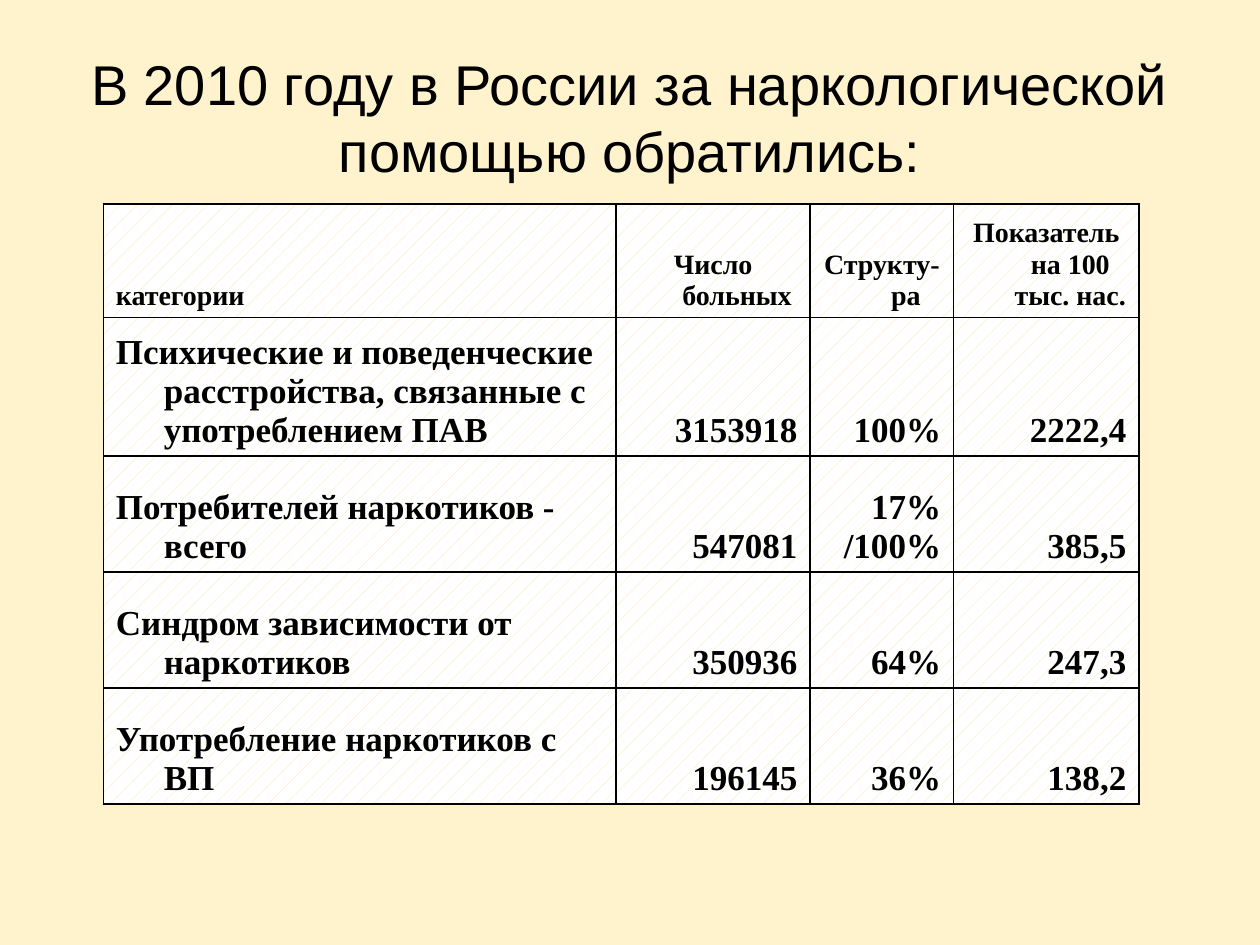
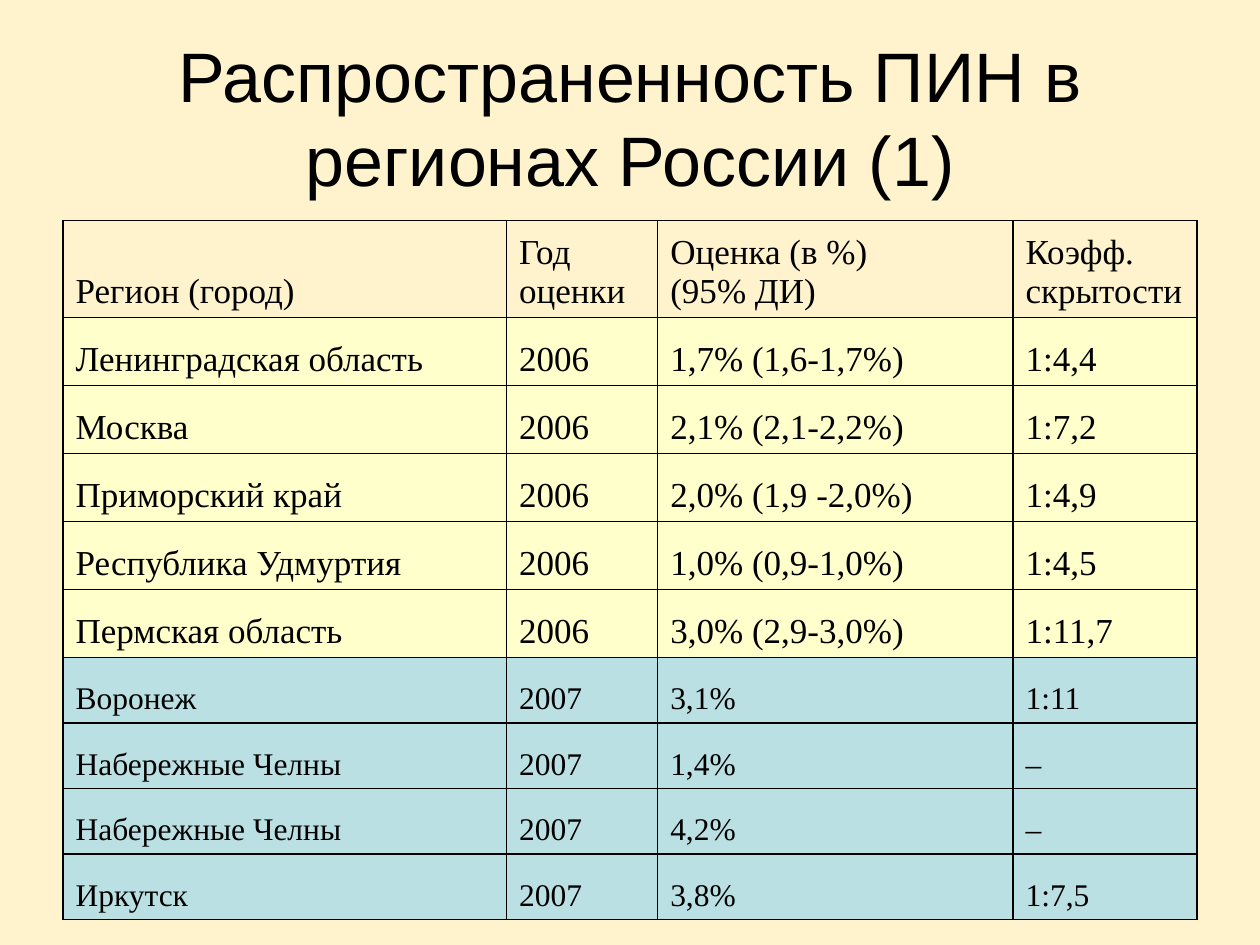
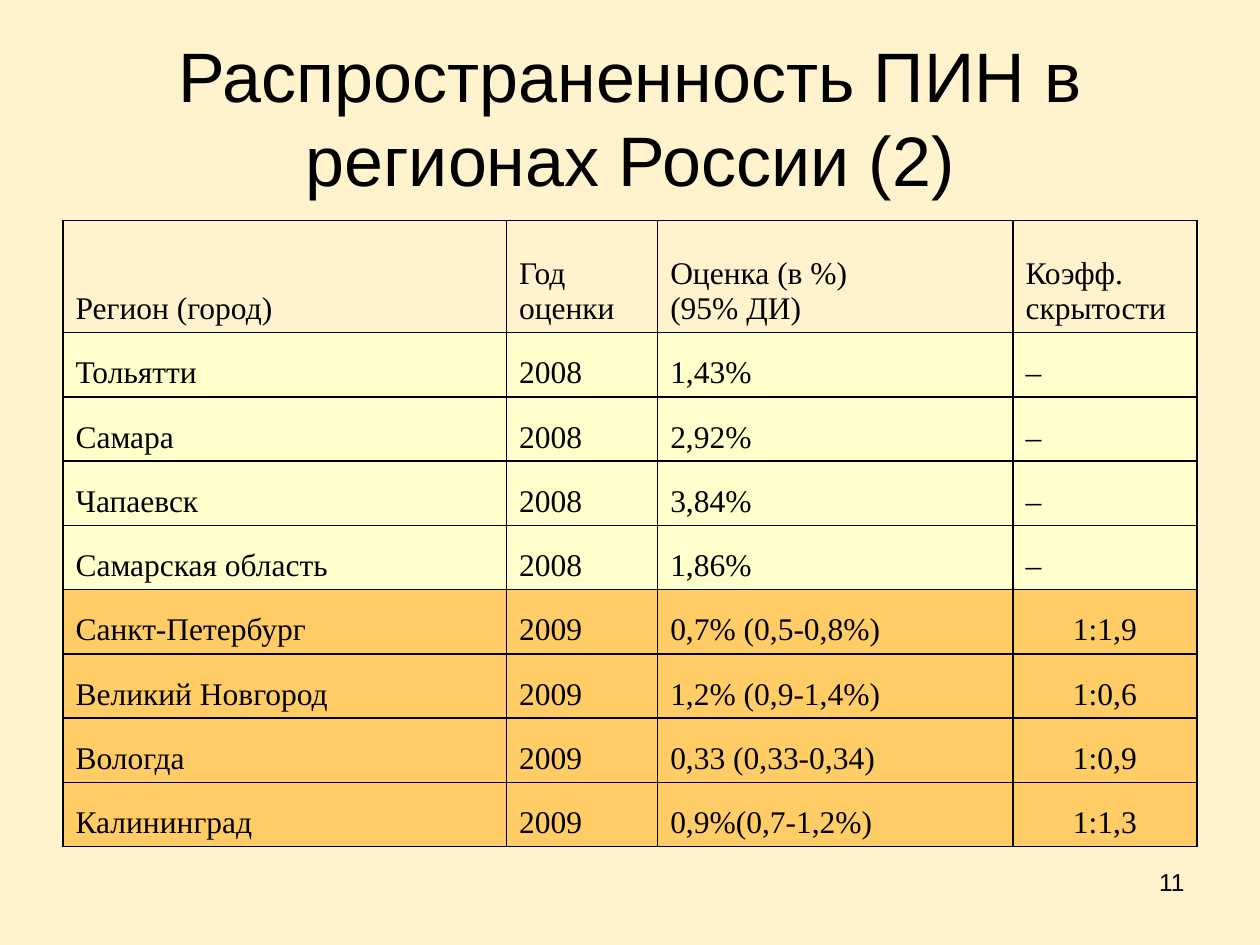
from dataclasses import dataclass

from lxml.etree import SubElement as Sub
from pptx import Presentation
from pptx.dml.color import RGBColor
from pptx.enum.dml import MSO_PATTERN as Pat
from pptx.enum.text import MSO_ANCHOR as Anchor, PP_ALIGN as Align
from pptx.oxml.ns import qn
from pptx.util import Inches, Pt

PAPER, INK, WHITE, HATCH = "FFF3CD", "000000", "FFFFFF", "FBE2A3"
CREAM, AQUA, AMBER = "FFFFCC", "BBE0E3", "FFCC66"
SANS, SERIF = "Arial", "Times New Roman"
SIDES = {"l": Align.LEFT, "c": Align.CENTER, "r": Align.RIGHT}
WIDE = [3.52, 1.2, 2.82, 1.46]
HEAD = ("Регион (город)", "Год оценки", "Оценка (в %)\n(95% ДИ)", "Коэфф. скрытости")


@dataclass
class Band:
    """Rows of one height, type size and fill; sides has a letter per column."""
    rows: list[tuple[str, ...]]
    high: float
    size: int
    fill: str = ""
    sides: str = "llll"


@dataclass
class Grid:
    left: float
    top: float
    cols: list[float]
    bands: list[Band]
    bold: bool = False
    hang: float = 0


@dataclass
class Page:
    title: str
    size: int
    grid: Grid
    num: str = ""


PAGES = [
    Page("В 2010 году в России за наркологической помощью обратились:", 32,
         Grid(0.82, 1.62, [4.07, 1.54, 1.14, 1.47], [
             Band([("категории", "Число больных", "Структу-ра",
                    "Показатель на 100 тыс. нас.")], 0.84, 16, HATCH, "lccc"),
             Band([("Психические и поведенческие расстройства, связанные с "
                    "употреблением ПАВ", "3153918", "100%", "2222,4")],
                  1.08, 20, HATCH, "lrrr"),
             Band([("Потребителей наркотиков - всего", "547081", "17%\n/100%", "385,5"),
                   ("Синдром зависимости от наркотиков", "350936", "64%", "247,3"),
                   ("Употребление наркотиков с ВП", "196145", "36%", "138,2")],
                  0.92, 20, HATCH, "lrrr"),
         ], bold=True, hang=0.38)),
    Page("Распространенность ПИН в регионах России (1)", 40,
         Grid(0.5, 1.75, WIDE, [
             Band([HEAD], 0.77, 20),
             Band([("Ленинградская область", "2006", "1,7% (1,6-1,7%)", "1:4,4"),
                   ("Москва", "2006", "2,1% (2,1-2,2%)", "1:7,2"),
                   ("Приморский край", "2006", "2,0% (1,9 -2,0%)", "1:4,9"),
                   ("Республика Удмуртия", "2006", "1,0% (0,9-1,0%)", "1:4,5"),
                   ("Пермская область", "2006", "3,0% (2,9-3,0%)", "1:11,7")],
                  0.54, 20, CREAM),
             Band([("Воронеж", "2007", "3,1%", "1:11"),
                   ("Набережные Челны", "2007", "1,4%", "–"),
                   ("Набережные Челны", "2007", "4,2%", "–"),
                   ("Иркутск", "2007", "3,8%", "1:7,5")], 0.52, 18, AQUA),
         ])),
    Page("Распространенность ПИН в регионах России (2)", 40,
         Grid(0.5, 1.75, WIDE, [
             Band([HEAD], 0.89, 18),
             Band([("Тольятти", "2008", "1,43%", "–"),
                   ("Самара", "2008", "2,92%", "–"),
                   ("Чапаевск", "2008", "3,84%", "–"),
                   ("Самарская область", "2008", "1,86%", "–")], 0.51, 18, CREAM),
             Band([("Санкт-Петербург", "2009", "0,7% (0,5-0,8%)", "1:1,9"),
                   ("Великий Новгород", "2009", "1,2% (0,9-1,4%)", "1:0,6"),
                   ("Вологда", "2009", "0,33 (0,33-0,34)", "1:0,9"),
                   ("Калининград", "2009", "0,9%(0,7-1,2%)", "1:1,3")],
                  0.51, 18, AMBER, "lllc"),
         ]), num="11"),
]


def tint(color, code: str) -> None:
    color.rgb = RGBColor.from_string(code)


def write(frame, text: str, side: str, look: dict, hang: float = 0) -> None:
    """Fill a text frame, one paragraph per line, with a hanging indent if given."""
    frame.text = text
    for para in frame.paragraphs:
        para.alignment = SIDES[side]
        if hang:
            props = para._p.get_or_add_pPr()
            props.set("marL", str(Inches(hang)))
            props.set("indent", str(-Inches(hang)))
        font = para.runs[0].font
        for key, value in look.items():
            setattr(font, key, value)
        tint(font.color, INK)


def label(slide, box: tuple, text: str, side: str, size: int, anchor) -> None:
    frame = slide.shapes.add_textbox(*map(Inches, box)).text_frame
    frame.word_wrap = True
    frame.vertical_anchor = anchor
    write(frame, text, side, {"name": SANS, "size": Pt(size)})


def edge(cell) -> None:
    """Rule all four sides; must run before the cell gets its fill."""
    props = cell._tc.get_or_add_tcPr()
    for tag in ("a:lnL", "a:lnR", "a:lnT", "a:lnB"):
        line = Sub(props, qn(tag), w=str(Pt(1)))
        Sub(Sub(line, qn("a:solidFill")), qn("a:srgbClr"), val=INK)


def paint(fill, code: str) -> None:
    if code == HATCH:
        fill.patterned()
        fill.pattern = Pat.PERCENT_5
        tint(fill.fore_color, HATCH)
        tint(fill.back_color, WHITE)
    elif code:
        fill.solid()
        tint(fill.fore_color, code)
    else:
        fill.background()


def draw(slide, grid: Grid) -> None:
    rows = [(band, row) for band in grid.bands for row in band.rows]
    size = sum(grid.cols), sum(band.high for band, _ in rows)
    table = slide.shapes.add_table(
        len(rows), len(grid.cols), *map(Inches, (grid.left, grid.top, *size))).table
    table.first_row = table.horz_banding = False
    for col, wide in zip(table.columns, grid.cols):
        col.width = Inches(wide)
    for line, (band, texts) in zip(table.rows, rows):
        line.height = Inches(band.high)
        look = {"name": SERIF, "size": Pt(band.size), "bold": grid.bold}
        for cell, text, side in zip(line.cells, texts, band.sides):
            cell.vertical_anchor = Anchor.BOTTOM
            edge(cell)
            paint(cell.fill, band.fill)
            write(cell.text_frame, text, side, look, grid.hang)


def main() -> None:
    deck = Presentation()
    deck.slide_width, deck.slide_height = Inches(10), Inches(7.5)
    for page in PAGES:
        slide = deck.slides.add_slide(deck.slide_layouts[6])
        paint(slide.background.fill, PAPER)
        if page.num:
            label(slide, (7.17, 6.83, 2.33, 0.52), page.num, "r", 14, Anchor.TOP)
        label(slide, (0.5, 0.3, 9, 1.25), page.title, "c", page.size, Anchor.MIDDLE)
        draw(slide, page.grid)
    deck.save("out.pptx")


if __name__ == "__main__":
    main()
